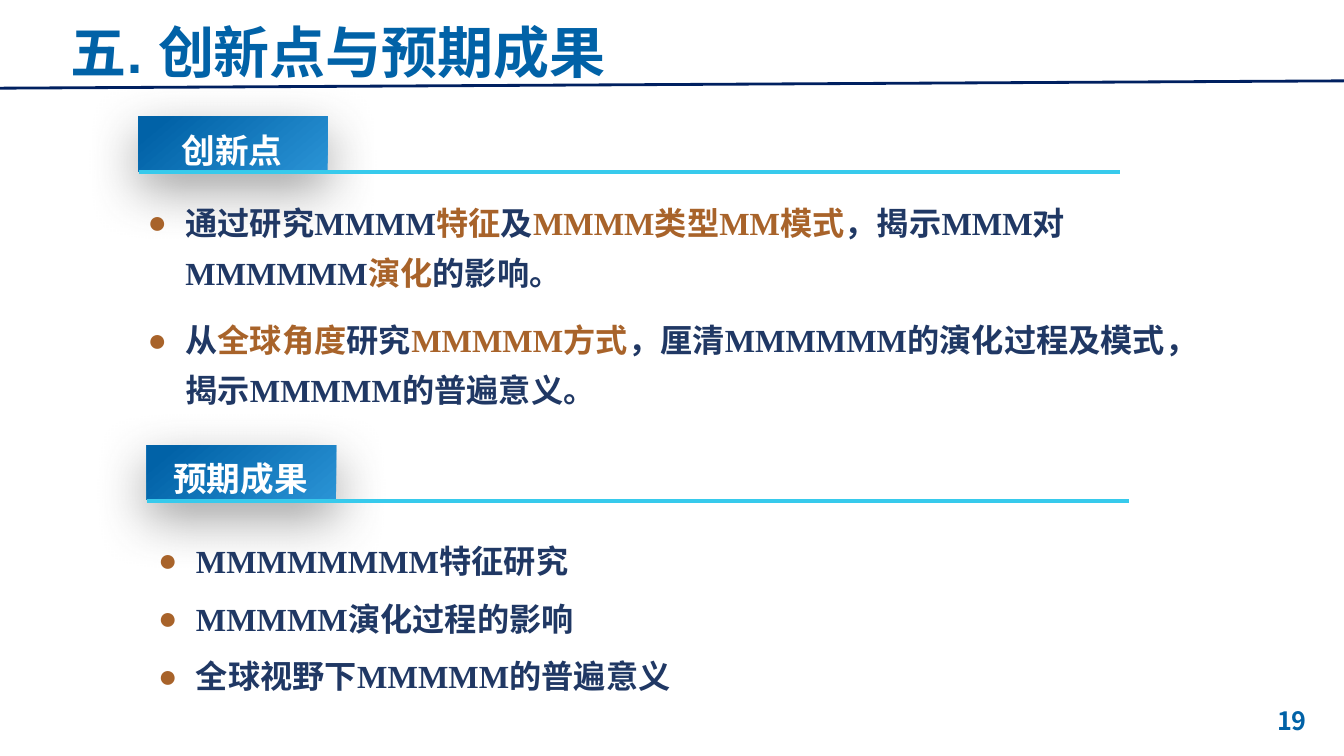
import pptx
import pptx.util
import pptx.dml.color
import pptx.enum.shapes
import pptx.enum.text
import pptx.oxml
import pptx.oxml.ns

RGB = pptx.dml.color.RGBColor
ALIGN = pptx.enum.text.PP_ALIGN
ANCHOR = pptx.enum.text.MSO_ANCHOR
SHAPE = pptx.enum.shapes.MSO_SHAPE
LINE = pptx.enum.shapes.MSO_CONNECTOR

NAVY = RGB(0x00, 0x20, 0x60)
BLUE = RGB(0x01, 0x62, 0xA7)
LIGHT = RGB(0x2A, 0x93, 0xD5)
CYAN = RGB(0x37, 0xCA, 0xEC)
INK = RGB(0x20, 0x38, 0x64)
RUST = RGB(0xA8, 0x63, 0x2A)
WHITE = RGB(0xFF, 0xFF, 0xFF)
GREY = RGB(0x80, 0x80, 0x80)

HAN = "Noto Sans CJK SC"
SCALE = 9525

GAINS = [
    "通过研究MMMM*特征*及*MMMM类型MM模式*，揭示MMM对MMMMMM*演化*的影响。",
    "从*全球角度*研究*MMMMM方式*，厘清MMMMMM的演化过程及模式，揭示MMMMM的普遍意义。",
]
GOALS = ["MMMMMMMM特征研究", "MMMMM演化过程的影响", "全球视野下MMMMM的普遍意义"]


def px(*sizes):
    return [pptx.util.Emu(size * SCALE) for size in sizes]


def node(xml):
    space = pptx.oxml.ns.nsdecls("a")
    return pptx.oxml.parse_xml(xml.replace(" ", f" {space} ", 1))


def place(shape, box):
    shape.left, shape.top, shape.width, shape.height = px(*box)


def bullet(para):
    props = para._p.get_or_add_pPr()
    props.set("marL", str(36 * SCALE))
    props.set("indent", str(-36 * SCALE))
    props.append(node(f'<a:buClr ><a:srgbClr val="{RUST}"/></a:buClr>'))
    props.append(node('<a:buChar char="●"/>'))


def write(shape, lines, size=23, font=HAN, color=INK, align=ALIGN.LEFT,
          anchor=ANCHOR.TOP, space=1.0, after=0, mark=False):
    frame = shape.text_frame
    frame.word_wrap = True
    frame.auto_size = pptx.enum.text.MSO_AUTO_SIZE.NONE
    frame.vertical_anchor = anchor
    for index, line in enumerate(lines):
        para = frame.add_paragraph() if index else frame.paragraphs[0]
        para.alignment = align
        para.line_spacing = space
        para.space_before = pptx.util.Pt(0)
        para.space_after = pptx.util.Pt(after)
        if mark:
            bullet(para)
        for part, text in enumerate(line.split("*")):
            run = para.add_run()
            run.text = text
            run.font.size = pptx.util.Pt(size)
            run.font.bold = True
            run.font.name = font
            run.font.color.rgb = RUST if part % 2 else color
            run._r.get_or_add_rPr().append(node(f'<a:ea typeface="{HAN}"/>'))


def label(slide, box, text, **form):
    write(slide.shapes.add_textbox(*px(*box)), [text], **form)


def rule(slide, ends, color, width):
    line = slide.shapes.add_connector(LINE.STRAIGHT, *px(*ends))
    line.line.color.rgb = color
    line.line.width = pptx.util.Pt(width)
    line._element.spPr.append(node("<a:effectLst />"))


def tab(slide, left, top, text):
    card = slide.shapes.add_shape(
        SHAPE.ROUNDED_RECTANGLE, *px(left, top, 180, 52))
    card.adjustments[0] = 0
    card.line.fill.background()
    card.fill.gradient()
    card.fill.gradient_angle = 130
    for stop, color, spot in zip(
            card.fill.gradient_stops, (LIGHT, BLUE), (0, 0.9)):
        stop.color.rgb = color
        stop.position = spot
    card.shadow.inherit = False
    glow = node(
        '<a:outerShdw blurRad="482600" dist="166370" dir="5400000" '
        f'algn="t" rotWithShape="0"><a:srgbClr val="{GREY}">'
        '<a:alpha val="75000"/></a:srgbClr></a:outerShdw>')
    card._element.spPr.find(pptx.oxml.ns.qn("a:effectLst")).append(glow)
    rule(slide, (left, top + 53, left + 935, top + 53), CYAN, 2.5)
    label(slide, (left + 4, top, 170, 52), text, size=24, color=WHITE,
          align=ALIGN.CENTER, space=1.2)


def main():
    deck = pptx.Presentation()
    deck.slide_width, deck.slide_height = px(1280, 720)
    slide = deck.slides.add_slide(deck.slide_layouts[3])
    title, gains, goals = slide.placeholders

    rule(slide, (0, 84, 1280, 77), NAVY, 2)
    label(slide, (966, 667, 288, 38), "19", size=18, color=BLUE,
          align=ALIGN.RIGHT, anchor=ANCHOR.MIDDLE)
    tab(slide, 132, 111, "创新点")
    tab(slide, 140, 424, "预期成果")

    place(title, (58, 27, 724, 51))
    write(title, ["五. 创新点与预期成果"], size=40, font="Arial",
          color=BLUE, anchor=ANCHOR.MIDDLE, space=0.9)
    place(gains, (131, 178, 1040, 223))
    write(gains, GAINS, font="Times New Roman", space=1.3, after=12, mark=True)
    place(goals, (141, 492, 1027, 170))
    write(goals, GOALS, font="Times New Roman", space=1.5, mark=True)
    for holder in (title, gains, goals):
        slide.shapes._spTree.append(holder._element)

    deck.save("out.pptx")


if __name__ == "__main__":
    main()
